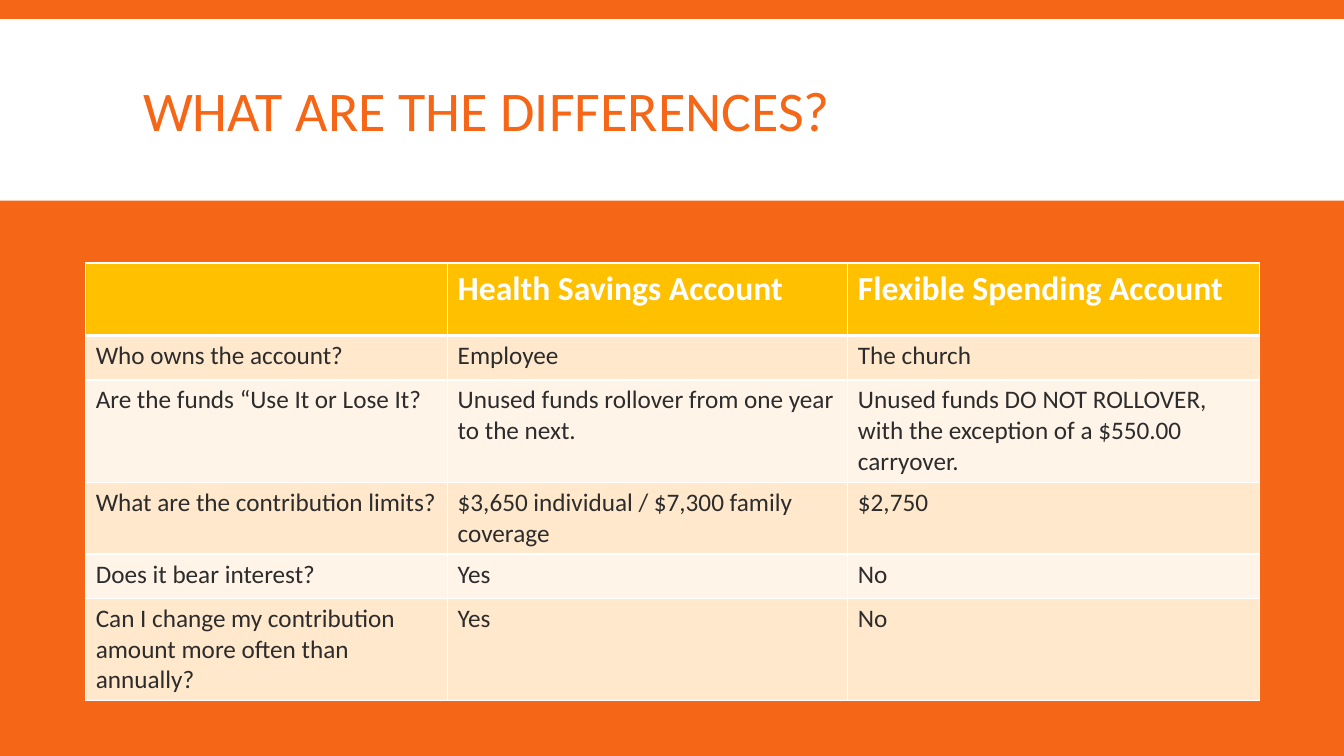
from lxml.etree import SubElement
from pptx import Presentation
from pptx.dml.color import RGBColor
from pptx.enum.shapes import MSO_SHAPE
from pptx.enum.text import MSO_ANCHOR, MSO_AUTO_SIZE, PP_ALIGN
from pptx.oxml.ns import qn
from pptx.util import Inches, Pt

COLORS = {
    "orange": "F56617", "white": "FFFFFF", "header": "FFC000",
    "odd row": "FFE8CC", "even row": "FFF4E7", "body text": "2C2C2C",
}
COLUMN_WIDTHS = [3.59, 3.97, 4.08]
ROW_HEIGHTS = [0.72, 0.44, 0.67, 0.44, 0.44, 0.79]
ROWS = [
    ["", "Health Savings Account", "Flexible Spending Account"],
    ["Who owns the account?", "Employee", "The church"],
    ["Are the funds “Use It or Lose It?",
     "Unused funds rollover from one year to the next.",
     "Unused funds DO NOT ROLLOVER, with the exception of a $550.00 carryover."],
    ["What are the contribution limits?",
     "$3,650 individual / $7,300 family coverage", "$2,750"],
    ["Does it bear interest?", "Yes", "No"],
    ["Can I change my contribution amount more often than annually?", "Yes", "No"],
]


def format_font(font, color, **values):
    font.color.rgb = RGBColor.from_string(COLORS[color])
    for name, value in values.items():
        setattr(font, name, value)


def add_borders(cell, widths):
    """Draw white cell borders; widths maps each side (L, R, T, B) to points."""
    properties = cell._tc.get_or_add_tcPr()
    for side, width in widths.items():
        line = SubElement(properties, qn(f"a:ln{side}"), w=str(Pt(width)))
        fill = SubElement(line, qn("a:solidFill"))
        SubElement(fill, qn("a:srgbClr"), val=COLORS["white"])


deck = Presentation()
deck.slide_width, deck.slide_height = Inches(13.33), Inches(7.5)
page = deck.slides.add_slide(deck.slide_layouts[5])
page.background.fill.solid()
page.background.fill.fore_color.rgb = RGBColor.from_string(COLORS["orange"])

# White title band, placed behind the title
band = page.shapes.add_shape(
    MSO_SHAPE.RECTANGLE, 0, Inches(0.19), deck.slide_width, Inches(1.8))
band.shadow.inherit = False
band.fill.solid()
band.fill.fore_color.rgb = RGBColor.from_string(COLORS["white"])
band.line.fill.background()
title = page.shapes.title
title._element.addprevious(band._element)

title.left, title.top = Inches(1.32), Inches(0.31)
title.width, title.height = Inches(10.7), Inches(1.65)
frame = title.text_frame
frame.text = "WHAT ARE THE DIFFERENCES?"
frame.auto_size = MSO_AUTO_SIZE.NONE
frame.vertical_anchor = MSO_ANCHOR.MIDDLE
para = frame.paragraphs[0]
para.alignment = PP_ALIGN.LEFT
para.line_spacing = 0.85
format_font(para.runs[0].font, "orange", name="Calibri", size=Pt(40))

# Comparison table
table = page.shapes.add_table(
    len(ROWS), len(COLUMN_WIDTHS), Inches(0.85), Inches(2.61),
    Inches(sum(COLUMN_WIDTHS)), Inches(sum(ROW_HEIGHTS))).table
for column, width in zip(table.columns, COLUMN_WIDTHS):
    column.width = Inches(width)

for row_index, (texts, height) in enumerate(zip(ROWS, ROW_HEIGHTS)):
    table.rows[row_index].height = Inches(height)
    is_header = row_index == 0
    row_fill = "header" if is_header else "odd row" if row_index % 2 else "even row"
    top = 3 if row_index == 1 else 1
    bottom = 3 if is_header else 1
    for column_index, text in enumerate(texts):
        cell = table.cell(row_index, column_index)
        add_borders(cell, {"L": 1, "R": 1, "T": top, "B": bottom})
        cell.fill.solid()
        cell.fill.fore_color.rgb = RGBColor.from_string(COLORS[row_fill])
        if text:
            cell.text = text
            format_font(
                cell.text_frame.paragraphs[0].runs[0].font,
                "white" if is_header else "body text",
                name="Calibri", size=Pt(24 if is_header else 18), bold=is_header)

deck.save("out.pptx")
